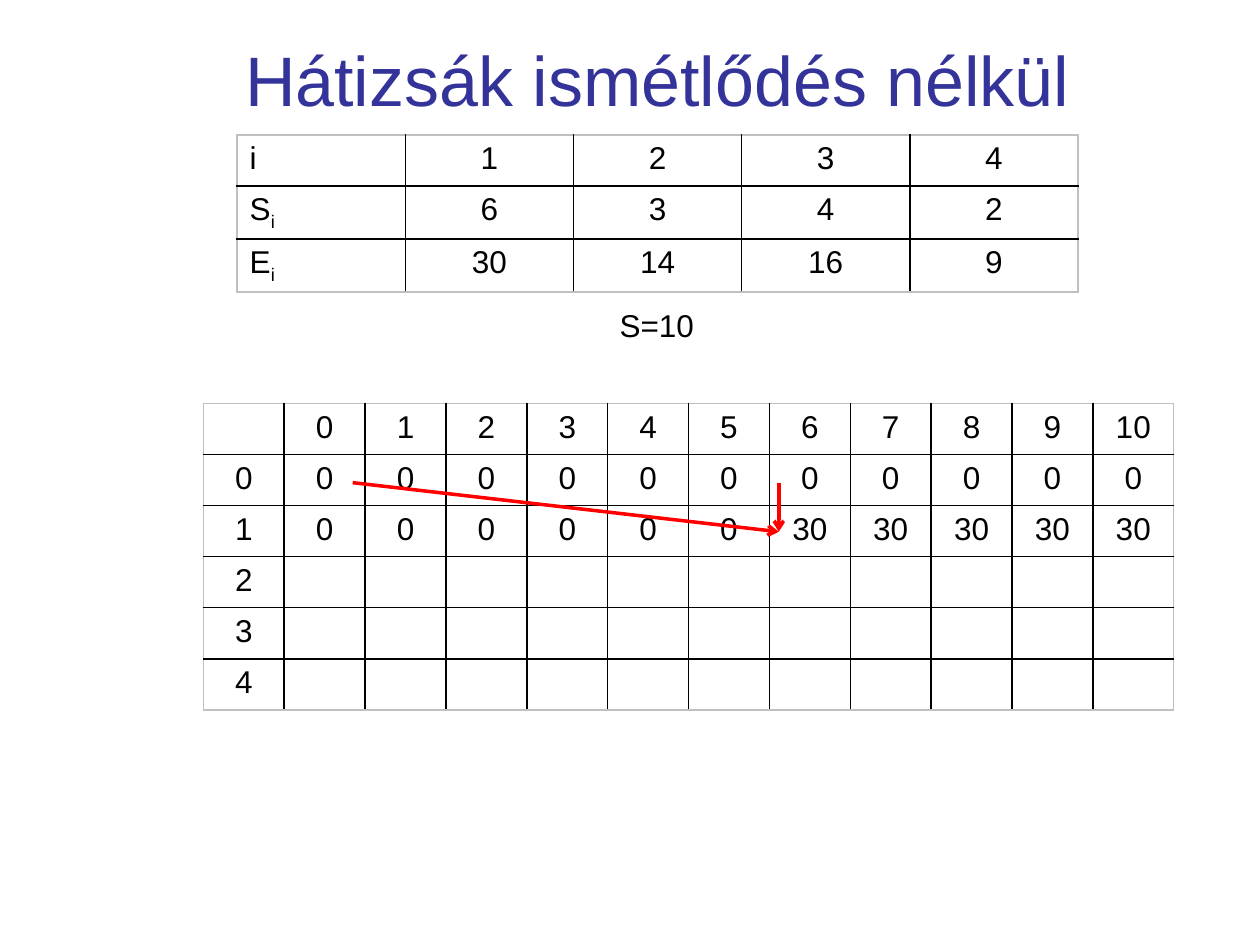
from lxml import etree
from pptx import Presentation
from pptx.dml.color import RGBColor
from pptx.enum.shapes import MSO_CONNECTOR
from pptx.enum.text import MSO_ANCHOR, MSO_AUTO_SIZE, PP_ALIGN
from pptx.oxml.ns import qn
from pptx.util import Cm, Pt

CENTER, LEFT = PP_ALIGN.CENTER, PP_ALIGN.LEFT
MIDDLE = MSO_ANCHOR.MIDDLE
FIT_SHAPE = MSO_AUTO_SIZE.SHAPE_TO_FIT_TEXT
STRAIGHT = MSO_CONNECTOR.STRAIGHT

BLUE = RGBColor(0x33, 0x33, 0x99)
BLACK = RGBColor(0, 0, 0)
GREY = RGBColor(0xC0, 0xC0, 0xC0)
RED = RGBColor(0xFF, 0, 0)
FONT = "Arial"
ROW_HEIGHT = 1.03

ITEMS = [
    ["i", "1", "2", "3", "4"],
    ["S_i", "6", "3", "4", "2"],
    ["E_i", "30", "14", "16", "9"],
]
CAPACITY = 10
FIRST_ITEM_SIZE, FIRST_ITEM_VALUE = 6, 30


def style_font(paragraph, size=18, color=BLACK):
    paragraph.font.size = Pt(size)
    paragraph.font.name = FONT
    paragraph.font.color.rgb = color


def write_label(paragraph, label):
    """Write a label; what follows an underscore becomes a subscript."""
    base, _, index = label.partition("_")
    if base:
        paragraph.add_run().text = base
    if index:
        subscript = paragraph.add_run()
        subscript.text = index
        subscript.font._element.set("baseline", "-25000")


def set_borders(cell, edges):
    """Draw the cell edges; edges maps a:lnX tags to colours."""
    properties = cell._tc.get_or_add_tcPr()
    for position, (tag, color) in enumerate(edges.items()):
        line = etree.Element(qn(tag), w=str(Pt(1)))
        fill = etree.SubElement(line, qn("a:solidFill"))
        etree.SubElement(fill, qn("a:srgbClr"), val=str(color))
        properties.insert(position, line)


def add_grid(slide, rows, left, top, column_width, first_align=CENTER):
    row_count, column_count = len(rows), len(rows[0])
    table = slide.shapes.add_table(
        row_count, column_count, Cm(left), Cm(top),
        Cm(column_width * column_count), Cm(ROW_HEIGHT * row_count)).table
    table.first_row = table.horz_banding = False
    for column in table.columns:
        column.width = Cm(column_width)
    for r, labels in enumerate(rows):
        table.rows[r].height = Cm(ROW_HEIGHT)
        for c, label in enumerate(labels):
            cell = table.cell(r, c)
            cell.fill.background()
            paragraph = cell.text_frame.paragraphs[0]
            paragraph.alignment = CENTER if c else first_align
            style_font(paragraph)
            write_label(paragraph, label)
            set_borders(cell, {
                "a:lnL": BLACK if c else GREY,
                "a:lnR": BLACK if c < column_count - 1 else GREY,
                "a:lnT": BLACK if r else GREY,
                "a:lnB": BLACK if r < row_count - 1 else GREY,
            })


def knapsack_rows():
    capacities = range(CAPACITY + 1)
    first_item = [FIRST_ITEM_VALUE if c >= FIRST_ITEM_SIZE else 0
                  for c in capacities]
    rows = [["", *capacities], [0] + [0 for _ in capacities], [1] + first_item]
    rows += [[item] + ["" for _ in capacities] for item in (2, 3, 4)]
    return [[str(value) for value in row] for row in rows]


def add_arrow(slide, start, end):
    arrow = slide.shapes.add_connector(
        STRAIGHT, *(Cm(value) for value in (*start, *end)))
    arrow.line.color.rgb = RED
    arrow.line.width = Pt(2)
    etree.SubElement(arrow.line._get_or_add_ln(), qn("a:tailEnd"), type="arrow")
    etree.SubElement(arrow._element.spPr, qn("a:effectLst"))


def set_title(slide, text):
    title = slide.shapes.title
    title.left, title.top = Cm(1.7), Cm(0)
    title.width, title.height = Cm(23.09), Cm(3.18)
    frame = title.text_frame
    frame.text = text
    frame.vertical_anchor = MIDDLE
    frame.paragraphs[0].alignment = CENTER
    style_font(frame.paragraphs[0], 40, BLUE)


def add_capacity_note(slide):
    note = slide.shapes.add_textbox(Cm(12.24), Cm(6.05), Cm(2.03), Cm(1.02))
    frame = note.text_frame
    frame.word_wrap = False
    frame.auto_size = FIT_SHAPE
    frame.text = f"S={CAPACITY}"
    frame.paragraphs[0].alignment = LEFT
    style_font(frame.paragraphs[0])


def main():
    presentation = Presentation()
    presentation.slide_width, presentation.slide_height = Cm(25.4), Cm(19.05)
    slide = presentation.slides.add_slide(presentation.slide_layouts[5])
    set_title(slide, "Hátizsák ismétlődés nélkül")
    add_grid(slide, ITEMS, 4.78, 2.72, 3.39, first_align=LEFT)
    add_capacity_note(slide)
    add_grid(slide, knapsack_rows(), 4.1, 8.13, 1.63)
    target = (15.7, 10.72)
    for start in ((15.7, 9.73), (7.11, 9.73)):
        add_arrow(slide, start, target)
    presentation.save("out.pptx")


if __name__ == "__main__":
    main()
